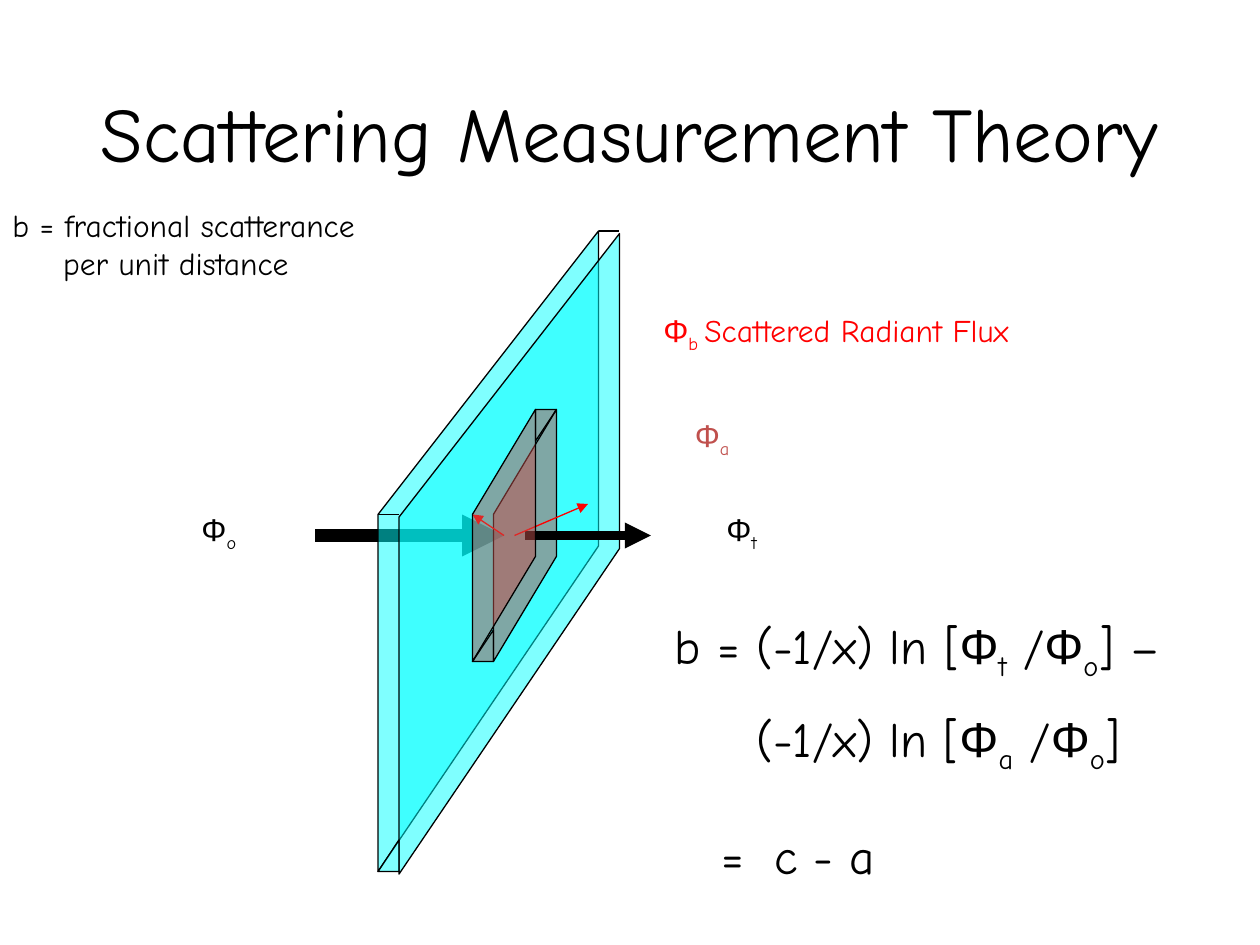
from pptx import Presentation
from pptx.dml.color import RGBColor as Rgb
from pptx.enum.shapes import MSO_CONNECTOR as Conn
from pptx.enum.text import MSO_ANCHOR as Anchor, PP_ALIGN as Align
from pptx.oxml.ns import qn
from pptx.util import Pt
from lxml.etree import SubElement as Sub

INK = {"black": "000000", "cyan": "00FFFF", "red": "FF0000", "brick": "C0504D"}

deck = Presentation()
deck.slide_width, deck.slide_height = Pt(720), Pt(540)
slide = deck.slides.add_slide(deck.slide_layouts[6])
shapes = slide.shapes


def draw(pts, fill=None, ink="black", wide=0.75, tip=False):
    spots = [(Pt(x), Pt(y)) for x, y in pts]
    if fill:
        pen = shapes.build_freeform(*spots[0], scale=1.0)
        pen.add_line_segments(spots[1:], close=True)
        part = pen.convert_to_shape()
        part.shadow.inherit = False
        part.fill.solid()
        part.fill.fore_color.rgb = Rgb.from_string(INK[fill])
        tone = part._element.spPr.find(qn("a:solidFill"))[0]
        Sub(tone, qn("a:alpha"), val="50000")
    else:
        part = shapes.add_connector(Conn.STRAIGHT, *spots[0], *spots[1])
    part.line.color.rgb = Rgb.from_string(INK[ink])
    part.line.width = Pt(wide)
    if tip:
        Sub(part.line._get_or_add_ln(), qn("a:tailEnd"), type="triangle")
    if not fill:
        Sub(part._element.spPr, qn("a:effectLst"))


def write(box, paras, size=18, ink="black", align=Align.LEFT,
          anchor=Anchor.TOP, dents=(0, 0), lead=0, gap=0):
    frame = shapes.add_textbox(*[Pt(v) for v in box]).text_frame
    frame.word_wrap = True
    frame.vertical_anchor = anchor
    for i, runs in enumerate(paras):
        para = frame.paragraphs[0] if i == 0 else frame.add_paragraph()
        para.alignment = align
        para.space_before = Pt(lead if i else 0)
        para._p.get_or_add_pPr().set("marL", str(Pt(dents[i])))
        for word in runs:
            run = para.add_run()
            run.text = word.lstrip("_")
            run.font.name = "Arial" if word == "Φ" else "Comic Neue"
            run.font.size = Pt(size)
            run.font.color.rgb = Rgb.from_string(INK[ink])
            if word.startswith("_"):
                run._r.get_or_add_rPr().set("baseline", "-25000")
            if word == " ":
                run._r.get_or_add_rPr().set("spc", str(gap * 100))


DEEP = 12
pane = [(216, 294), (216, 498), (342, 312), (342, 132)]
cell = [(306, 234), (270, 294), (270, 378), (306, 318)]

write((0, 30, 720, 90), [["Scattering Measurement Theory"]], size=44,
      align=Align.CENTER, anchor=Anchor.MIDDLE)

draw([(180, 306), (288, 306)], wide=8, tip=True)
draw(pane, fill="cyan")
draw([(x + DEEP, y + 1.5) for x, y in pane], fill="cyan")
for x, y in (pane[0], pane[3], pane[1]):
    draw([(x, y), (x + DEEP, y)])
for x, y, dx, dy, fill in (
    (282, 378, -DEEP, -18, "brick"),
    (306, 234, DEEP, 18, "brick"),
    (228, 498, -DEEP, -18, "cyan"),
):
    draw([(x + dx, y), (x, y), (x, y + dy)], fill=fill)
draw([(x + DEEP, y) for x, y in cell], fill="brick")
draw([(288, 306), (270, 294)], ink="red", tip=True)
draw([(300, 306), (372, 306)], wide=5, tip=True)
draw([(294, 306), (336, 288)], ink="red", tip=True)
draw(cell, fill="brick")

for x, y, wide, ink, runs in (
    (408, 288, 60, "black", ["Φ", "_t"]),
    (390, 234, 41, "brick", ["Φ", "_a"]),
    (372, 174, 310, "red", ["Φ", "_b ", "Scattered Radiant Flux"]),
    (108, 288, 60, "black", ["Φ", "_o"]),
):
    write((x, y, wide, 36), [runs], ink=ink)

write((0, 114, 312, 65),
      [["b = fractional scatterance"], ["per unit distance"]], dents=(0, 29))
write((372, 348, 324, 91),
      [["b = (-1/x) ln [", "Φ", "_t", " /", "Φ", "_o", "] –"],
       ["(-1/x) ln [", "Φ", "_a", " /", "Φ", "_o", "]"]],
      size=28, dents=(6.5, 53), lead=15)
write((390, 468, 174, 63), [["=", " ", "c - a"]], size=28, dents=(15,), gap=8)

deck.save("out.pptx")
